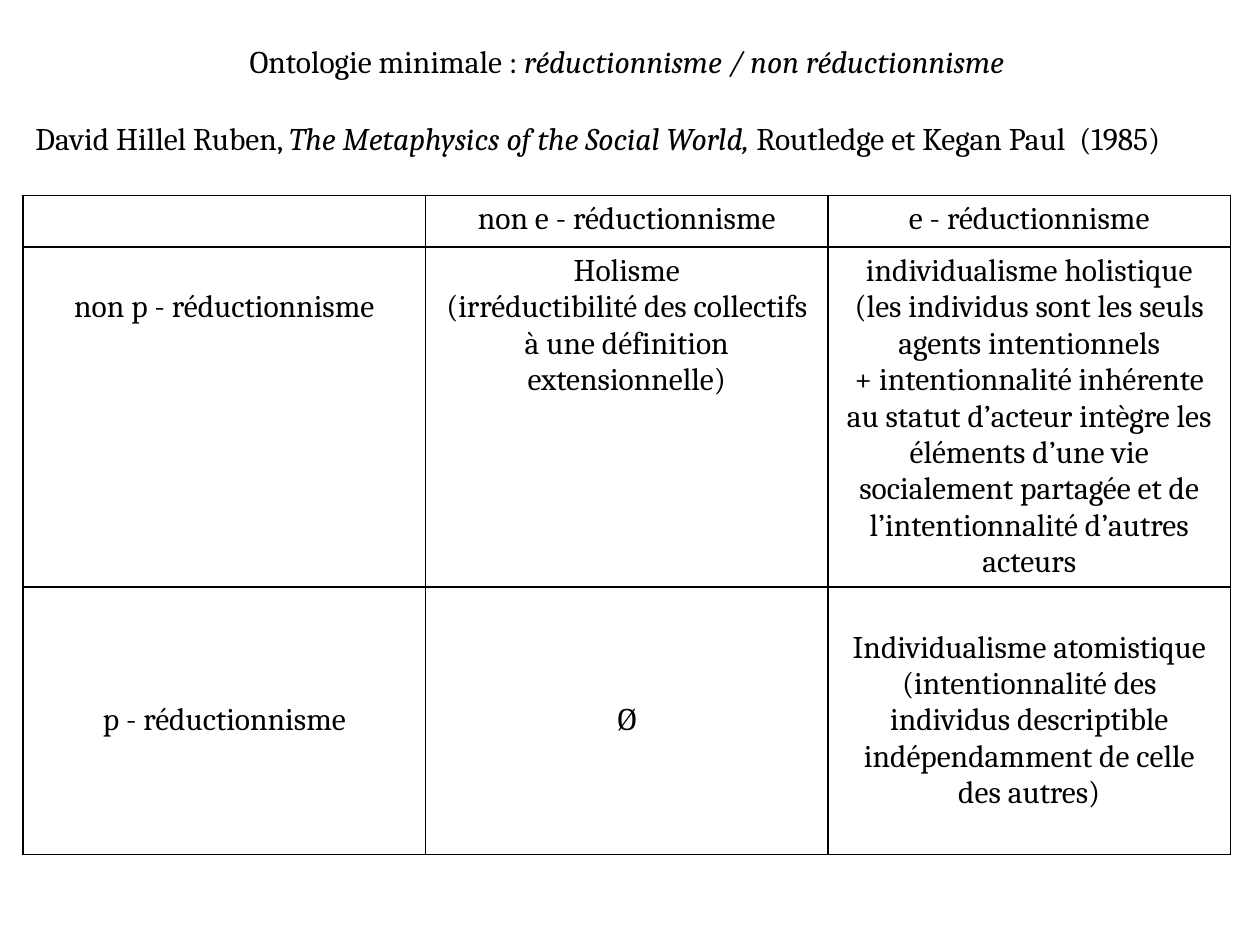
from pptx import Presentation
from pptx.dml.color import RGBColor
from pptx.enum import text
from pptx.oxml import parse_xml
from pptx.oxml.ns import nsdecls
from pptx.util import Pt

INK = "000000"
FONT = {"name": "Cambria", "size": Pt(18), "bold": False}
HEADING = [
    (text.PP_ALIGN.CENTER, 0, [("Ontologie minimale : ", False),
                               ("réductionnisme / non réductionnisme", True)]),
    (text.PP_ALIGN.LEFT, 22.4, [("David Hillel Ruben, ", False),
                                ("The Metaphysics of the Social World, ", True),
                                ("Routledge et Kegan Paul  (1985)", False)]),
]
ROWS = [
    [[], ["non e - réductionnisme"], ["e - réductionnisme"]],
    [["non p - réductionnisme"],
     ["Holisme",
      "(irréductibilité des collectifs à une définition extensionnelle)"],
     ["individualisme holistique",
      "(les individus sont les seuls agents intentionnels",
      "+ intentionnalité inhérente au statut d’acteur intègre les éléments "
      "d’une vie socialement partagée et de l’intentionnalité d’autres acteurs"]],
    [["p - réductionnisme"],
     ["Ø"],
     ["Individualisme atomistique",
      "(intentionnalité des individus descriptible indépendamment de celle des autres)"]],
]
LEFT, WIDTH = 13.2, 690
TABLE_TOP = 111.6
HEIGHTS = [29.5, 194, 153]
ANCHORS = [text.MSO_ANCHOR.TOP, text.MSO_ANCHOR.TOP, text.MSO_ANCHOR.MIDDLE]
ROW_LABEL_DROP = 24.4


def color(value):
    return RGBColor.from_string(value)


def write(p, runs, align, before=0):
    p.alignment = align
    p.space_before = Pt(before)
    for words, italic in runs:
        r = p.add_run()
        r.text = words
        for key, value in {**FONT, "italic": italic}.items():
            setattr(r.font, key, value)
        r.font.color.rgb = color(INK)


def paragraphs(tf, count):
    return [tf.paragraphs[0]] + [tf.add_paragraph() for _ in range(count - 1)]


def outline(cell):
    for side in ("lnL", "lnR", "lnT", "lnB"):
        cell._tc.get_or_add_tcPr().append(parse_xml(
            f'<a:{side} {nsdecls("a")} w="{Pt(1)}"><a:solidFill>'
            f'<a:srgbClr val="{INK}"/></a:solidFill></a:{side}>'))


prs = Presentation()
prs.slide_width, prs.slide_height = Pt(720), Pt(540)
s = prs.slides.add_slide(prs.slide_layouts[6])

frame = s.shapes.add_table(3, 3, Pt(LEFT), Pt(TABLE_TOP), Pt(WIDTH), Pt(sum(HEIGHTS)))
table = frame.table
table.first_row = table.horz_banding = False
for column in table.columns:
    column.width = Pt(WIDTH / 3)
for i, (row, height, anchor) in enumerate(zip(ROWS, HEIGHTS, ANCHORS)):
    table.rows[i].height = Pt(height)
    for j, lines in enumerate(row):
        cell = table.cell(i, j)
        outline(cell)
        cell.fill.background()
        cell.vertical_anchor = anchor
        for p, line in zip(paragraphs(cell.text_frame, len(lines)), lines):
            write(p, [(line, False)], text.PP_ALIGN.CENTER)
table.cell(1, 0).margin_top = Pt(ROW_LABEL_DROP)

sp = s.shapes.add_textbox(Pt(LEFT), Pt(20.2), Pt(WIDTH), Pt(72.7))
tf = sp.text_frame
tf.word_wrap = True
for p, (align, before, runs) in zip(paragraphs(tf, len(HEADING)), HEADING):
    write(p, runs, align, before)

prs.save("out.pptx")
